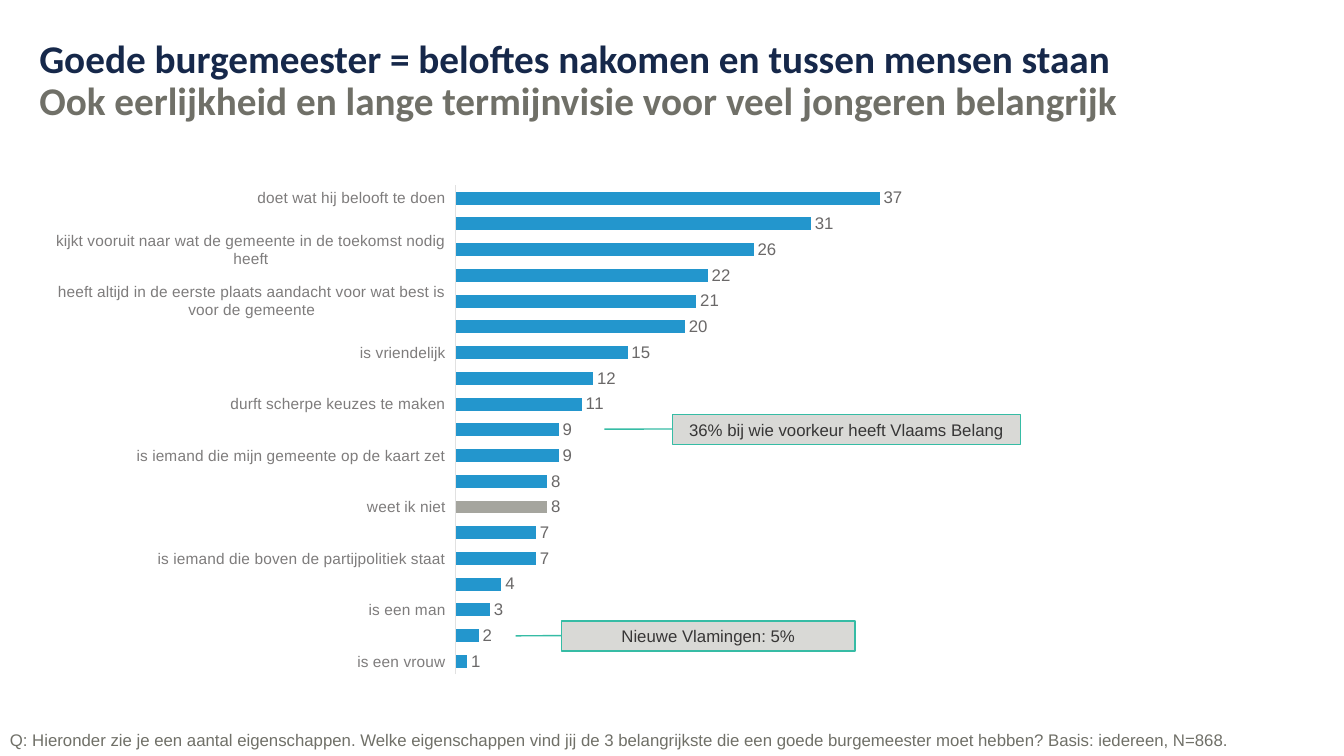
"""Build the slide on what young people value in a good mayor."""
from lxml import etree
from pptx import Presentation
from pptx.chart.data import CategoryChartData
from pptx.dml.color import RGBColor
from pptx.enum.chart import XL_CHART_TYPE, XL_LABEL_POSITION, XL_TICK_LABEL_POSITION, XL_TICK_MARK
from pptx.enum.shapes import MSO_SHAPE
from pptx.enum.text import MSO_ANCHOR, PP_ALIGN
from pptx.oxml import parse_xml
from pptx.oxml.ns import nsdecls, qn
from pptx.util import Inches, Pt


def rgb(value):
    return RGBColor.from_string(value)


def set_font(font, size, color, name="Arial", bold=False):
    font.size = Pt(size)
    font.name = name
    font.bold = bold
    font.color.rgb = rgb(color)


prs = Presentation()
prs.slide_width = Inches(13.33)
prs.slide_height = Inches(7.5)
slide = prs.slides.add_slide(prs.slide_layouts[6])

title = slide.shapes.add_textbox(Inches(0.39), Inches(0.39), Inches(11.7), Inches(0.85)).text_frame
title.word_wrap = True
title.margin_left = title.margin_right = title.margin_top = title.margin_bottom = 0
heading = title.paragraphs[0]
heading.line_spacing = 0.9
headline = heading.add_run()
headline.text = "Goede burgemeester = beloftes nakomen en tussen mensen staan"
set_font(headline.font, 28, "16284A", "Calibri", True)
heading.add_line_break()
subline = heading.add_run()
subline.text = "Ook eerlijkheid en lange termijnvisie voor veel jongeren belangrijk"
set_font(subline.font, 28, "707068", "Calibri", True)

qualities = [
    ("doet wat hij belooft te doen", 37),
    ("staat tussen de mensen, niet erboven", 31),
    ("kijkt vooruit naar wat de gemeente in de toekomst nodig heeft", 26),
    ("is eerlijk", 22),
    ("heeft altijd in de eerste plaats aandacht voor wat best is voor de gemeente", 21),
    ("betrekt de inwoners bij het beleid", 20),
    ("is vriendelijk", 15),
    ("is makkelijk bereikbaar voor alle burgers", 12),
    ("durft scherpe keuzes te maken", 11),
    ("is een geboren en getogen Vlaming", 9),
    ("is iemand die mijn gemeente op de kaart zet", 9),
    ("kiest voor meest praktische oplossingen", 8),
    ("weet ik niet", 8),
    ("is een teamspeler", 7),
    ("is iemand die boven de partijpolitiek staat", 7),
    ("is compromisbereid", 4),
    ("is een man", 3),
    ("is van allochtone afkomst", 2),
    ("is een vrouw", 1),
]
names = [name for name, share in qualities]
data = CategoryChartData()
data.categories = names
data.add_series("Series 1", [share for name, share in qualities])
chart = slide.shapes.add_chart(
    XL_CHART_TYPE.BAR_CLUSTERED, Inches(0.39), Inches(1.7), Inches(8.88), Inches(5.15), data
).chart
chart.has_legend = False
chart.has_title = False
set_font(chart.font, 10, "373636")

quality_axis = chart.category_axis
quality_axis.reverse_order = True
quality_axis.major_tick_mark = XL_TICK_MARK.NONE
quality_axis.tick_label_position = XL_TICK_LABEL_POSITION.LOW
quality_axis.format.line.color.rgb = rgb("E1E1E1")
quality_axis.format.line.width = Pt(0.75)
set_font(quality_axis.tick_labels.font, 11, "7E7C7C")

share_axis = chart.value_axis
share_axis.minimum_scale = 0
share_axis.maximum_scale = 40
share_axis.has_major_gridlines = False
share_axis.visible = False

bars = chart.plots[0]
bars.gap_width = 100
bars.vary_by_categories = False
shares = bars.series[0]
shares.format.fill.solid()
shares.format.fill.fore_color.rgb = rgb("2396CD")
dont_know = shares.points[names.index("weet ik niet")].format.fill
dont_know.solid()
dont_know.fore_color.rgb = rgb("A5A59E")

share_labels = shares.data_labels
share_labels.show_value = True
share_labels.position = XL_LABEL_POSITION.OUTSIDE_END
share_labels.number_format = "#,##0"
share_labels.number_format_is_linked = False
set_font(share_labels.font, 12, "6A6868")

plot_area = chart._chartSpace.chart.plotArea
for old_layout in plot_area.findall(qn("c:layout")):
    plot_area.remove(old_layout)
layout = parse_xml(f"<c:layout {nsdecls('c')}><c:manualLayout/></c:layout>")
for tag, value in [
    ("layoutTarget", "inner"), ("xMode", "edge"), ("yMode", "edge"),
    ("x", "0.465"), ("y", "0.027"), ("w", "0.512"), ("h", "0.942"),
]:
    etree.SubElement(layout[0], qn(f"c:{tag}")).set("val", value)
plot_area.insert(0, layout)

question = slide.shapes.add_textbox(0, Inches(7.19), Inches(13.33), Inches(0.3)).text_frame
question.word_wrap = True
question.text = (
    "Q: Hieronder zie je een aantal eigenschappen. Welke eigenschappen vind jij de 3 belangrijkste "
    "die een goede burgemeester moet hebben? Basis: iedereen, N=868."
)
set_font(question.paragraphs[0].font, 12, "707068")

for remark, left, top, width, reach in [
    ("36% bij wie voorkeur heeft Vlaams Belang", 6.67, 4.11, 3.45, -0.196),
    ("Nieuwe Vlamingen: 5%", 5.57, 6.16, 2.91, -0.157),
]:
    callout = slide.shapes.add_shape(
        MSO_SHAPE.LINE_CALLOUT_1, Inches(left), Inches(top), Inches(width), Inches(0.3)
    )
    for index, value in enumerate([0.488, 0, 0.495, reach]):
        callout.adjustments[index] = value
    callout.shadow.inherit = False
    callout.fill.solid()
    callout.fill.fore_color.rgb = rgb("D9D9D6")
    callout.line.color.rgb = rgb("36BCA5")
    callout.line.width = Pt(1)
    frame = callout.text_frame
    frame.word_wrap = True
    frame.vertical_anchor = MSO_ANCHOR.MIDDLE
    frame.text = remark
    frame.paragraphs[0].alignment = PP_ALIGN.CENTER
    set_font(frame.paragraphs[0].font, 12, "373636")

prs.save("out.pptx")
